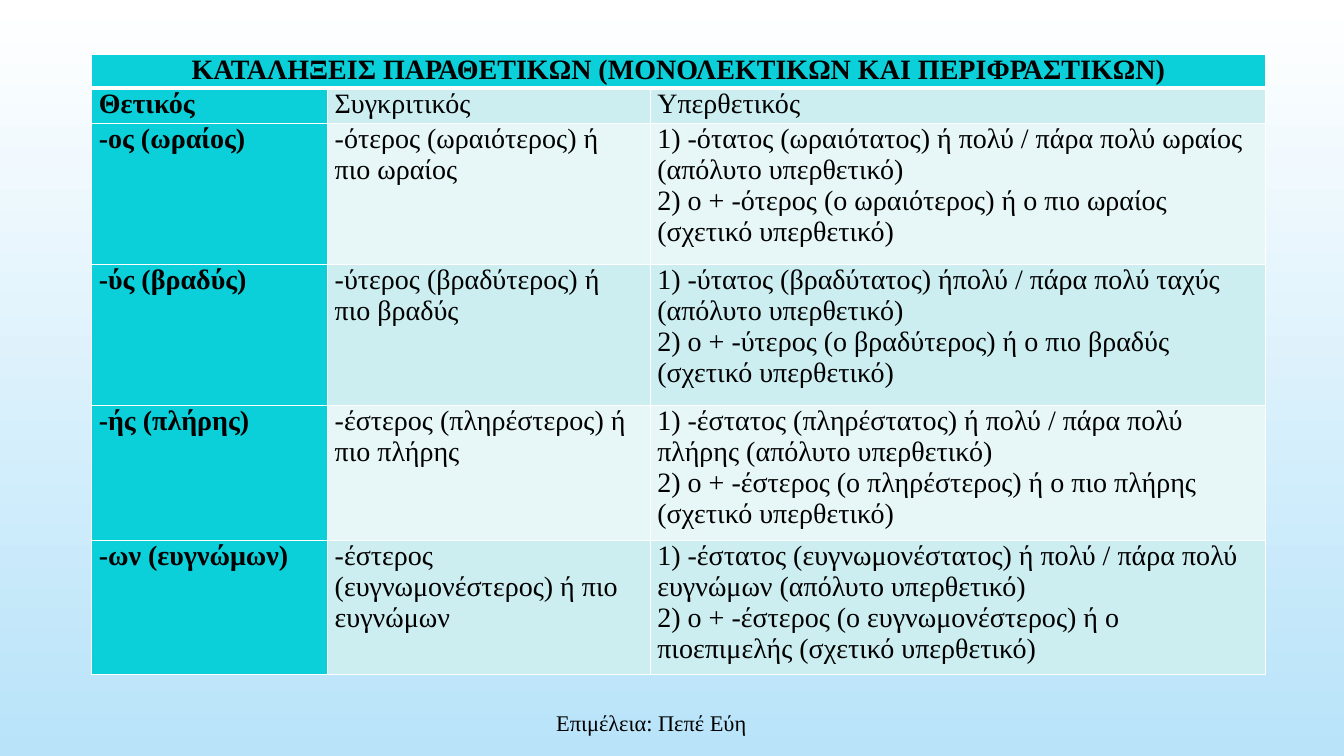
from dataclasses import dataclass

from lxml import etree
from pptx import Presentation
from pptx.dml.color import RGBColor
from pptx.enum.text import MSO_ANCHOR, PP_ALIGN
from pptx.oxml.ns import qn
from pptx.util import Inches, Pt

CENTER, LEFT = PP_ALIGN.CENTER, PP_ALIGN.LEFT
MIDDLE = MSO_ANCHOR.MIDDLE

BLACK = RGBColor(0x00, 0x00, 0x00)
WHITE = RGBColor(0xFF, 0xFF, 0xFF)
SKY = RGBColor(0xB8, 0xE3, 0xF9)
TURQUOISE = RGBColor(0x0B, 0xD0, 0xD9)
BAND_DARK = RGBColor(0xCC, 0xEE, 0xF1)
BAND_LIGHT = RGBColor(0xE7, 0xF7, 0xF8)

FONT = "Times New Roman"
COL_WIDTHS = (2.34, 3.2, 6.1)
TITLE = "ΚΑΤΑΛΗΞΕΙΣ ΠΑΡΑΘΕΤΙΚΩΝ (ΜΟΝΟΛΕΚΤΙΚΩΝ ΚΑΙ ΠΕΡΙΦΡΑΣΤΙΚΩΝ)"
TITLE_HEIGHT = 0.24


@dataclass(frozen=True)
class DegreeRow:
    """One row of degrees; a line break starts a new paragraph."""
    height: float
    positive: str
    comparative: str
    superlative: str


DEGREES = (
    DegreeRow(0.35, "Θετικός", "Συγκριτικός", "Υπερθετικός"),
    DegreeRow(1.4, "-ος (ωραίος)",
              "-ότερος (ωραιότερος) ή\nπιο ωραίος",
              "1) -ότατος (ωραιότατος) ή πολύ / πάρα πολύ ωραίος (απόλυτο υπερθετικό)\n"
              "2) ο + -ότερος (ο ωραιότερος) ή ο πιο ωραίος (σχετικό υπερθετικό)"),
    DegreeRow(1.4, "-ύς (βραδύς)",
              "-ύτερος (βραδύτερος) ή\nπιο βραδύς",
              "1) -ύτατος (βραδύτατος) ήπολύ / πάρα πολύ ταχύς (απόλυτο υπερθετικό)\n"
              "2) ο + -ύτερος (ο βραδύτερος) ή ο πιο βραδύς (σχετικό υπερθετικό)"),
    DegreeRow(1.02, "-ής (πλήρης)",
              "-έστερος (πληρέστερος) ή πιο πλήρης",
              "1) -έστατος (πληρέστατος) ή πολύ / πάρα πολύ πλήρης (απόλυτο υπερθετικό)\n"
              "2) ο + -έστερος (ο πληρέστερος) ή ο πιο πλήρης (σχετικό υπερθετικό)"),
    DegreeRow(1.03, "-ων (ευγνώμων)",
              "-έστερος (ευγνωμονέστερος) ή πιο ευγνώμων",
              "1) -έστατος (ευγνωμονέστατος) ή πολύ / πάρα πολύ ευγνώμων (απόλυτο υπερθετικό)\n"
              "2) ο + -έστερος (ο ευγνωμονέστερος) ή ο πιοεπιμελής (σχετικό υπερθετικό)"),
)


def write_text(tf, text: str, size: float, bold: bool = False, align=LEFT) -> None:
    for i, line in enumerate(text.split("\n")):
        p = tf.paragraphs[0] if i == 0 else tf.add_paragraph()
        p.alignment = align
        r = p.add_run()
        r.text = line
        r.font.name = FONT
        r.font.size = Pt(size)
        r.font.bold = bold
        r.font.color.rgb = BLACK


def set_borders(cell, top: float = 1, bottom: float = 1) -> None:
    tc_pr = cell._tc.get_or_add_tcPr()
    for tag, width in (("lnL", 1), ("lnR", 1), ("lnT", top), ("lnB", bottom)):
        ln = etree.SubElement(tc_pr, qn(f"a:{tag}"), w=str(Pt(width)))
        fill = etree.SubElement(ln, qn("a:solidFill"))
        etree.SubElement(fill, qn("a:srgbClr"), val=str(WHITE))


def format_cell(cell, color: RGBColor, top: float = 1, bottom: float = 1) -> None:
    cell.margin_left = cell.margin_right = Inches(0.07)
    cell.margin_top = cell.margin_bottom = 0
    set_borders(cell, top, bottom)
    cell.fill.solid()
    cell.fill.fore_color.rgb = color


def add_degree_table(slide) -> None:
    heights = [TITLE_HEIGHT] + [row.height for row in DEGREES]
    table = slide.shapes.add_table(
        len(heights), len(COL_WIDTHS), Inches(0.91), Inches(0.54),
        Inches(sum(COL_WIDTHS)), Inches(sum(heights))).table
    for column, width in zip(table.columns, COL_WIDTHS):
        column.width = Inches(width)
    for row, height in zip(table.rows, heights):
        row.height = Inches(height)

    # Title row across all columns
    for cell in table.rows[0].cells:
        format_cell(cell, TURQUOISE, bottom=3)
    table.cell(0, 0).merge(table.cell(0, len(COL_WIDTHS) - 1))
    write_text(table.cell(0, 0).text_frame, TITLE, 20, True, CENTER)

    # Degree rows: turquoise first column, banded others
    for r, row in enumerate(DEGREES, start=1):
        band = BAND_DARK if r % 2 else BAND_LIGHT
        for c, text in enumerate((row.positive, row.comparative, row.superlative)):
            cell = table.cell(r, c)
            format_cell(cell, band if c else TURQUOISE, top=3 if r == 1 else 1)
            write_text(cell.text_frame, text, 20, bold=c == 0)


def add_credit(slide) -> None:
    box = slide.shapes.add_textbox(Inches(2.81), Inches(6.97), Inches(7.3), Inches(0.4))
    tf = box.text_frame
    tf.word_wrap = True
    tf.vertical_anchor = MIDDLE
    write_text(tf, "Επιμέλεια: Πεπέ Εύη", 16, align=CENTER)


def set_background(slide) -> None:
    fill = slide.background.fill
    fill.gradient()
    fill.gradient_angle = 270
    for stop, position, color in zip(fill.gradient_stops, (0, 1), (WHITE, SKY)):
        stop.position = position
        stop.color.rgb = color


def main() -> None:
    prs = Presentation()
    prs.slide_width, prs.slide_height = Inches(13.33), Inches(7.5)
    slide = prs.slides.add_slide(prs.slide_layouts[6])
    set_background(slide)
    add_credit(slide)
    add_degree_table(slide)
    prs.save("out.pptx")


if __name__ == "__main__":
    main()
